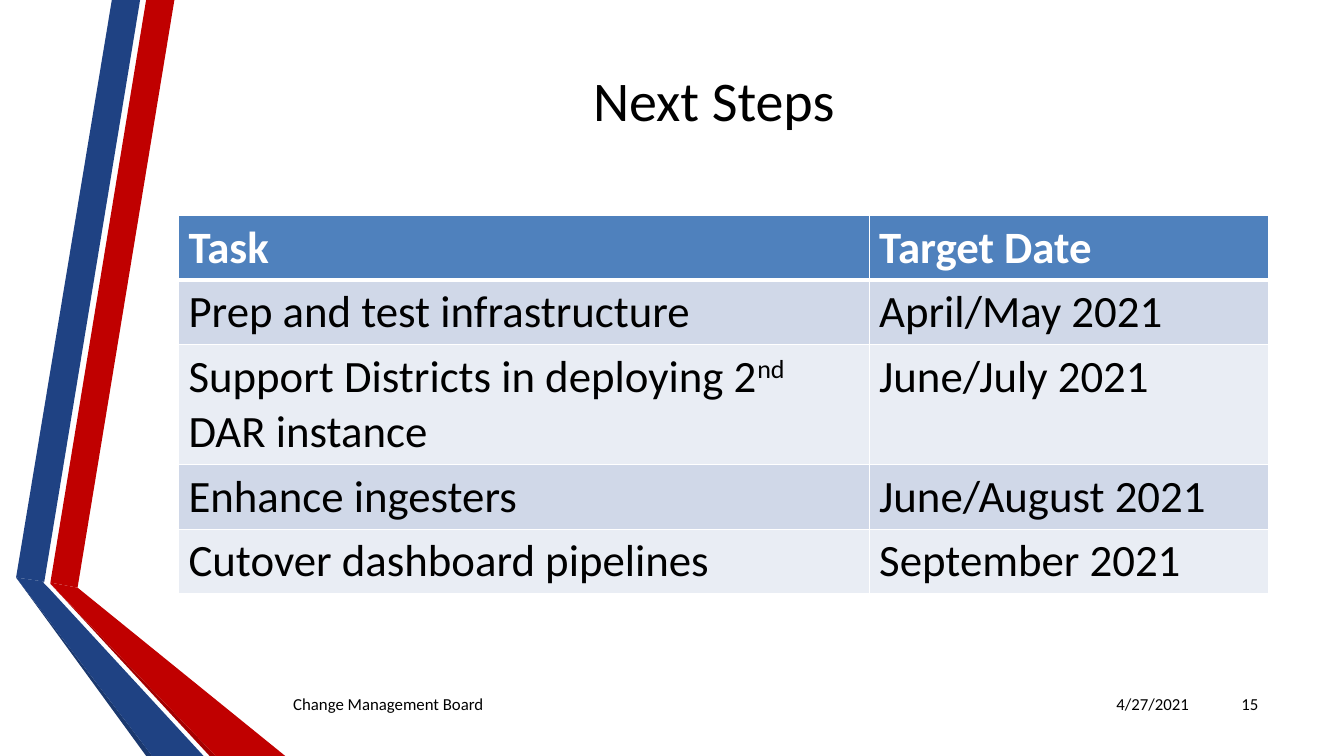
"""Build the Next Steps slide with its ribbon, task table and footer."""
from lxml import etree
from pptx import Presentation
from pptx.dml.color import RGBColor
from pptx.enum.text import MSO_ANCHOR, PP_ALIGN
from pptx.oxml import ns
from pptx.util import Pt

PX = 9144
FONT = "Calibri"
COLORS = {
    "red": "C00000", "dark red": "A40000", "blue": "1F4283", "dark blue": "1B396F",
    "header": "4F81BD", "odd row": "D0D8E8", "even row": "E9EDF4",
    "white": "FFFFFF", "black": "000000",
}
RIBBONS = [
    ("red", [(50, 578), (77, 583), (173, 0), (145, 0)]),
    ("blue", [(139, 0), (111, 0), (16, 573), (44, 577)]),
    ("dark blue", [(16, 573), (145, 750), (151, 750)]),
    ("dark red", [(50, 579), (208, 750), (214, 750)]),
    ("red", [(50, 578), (50, 579), (214, 750), (283, 750), (77, 583)]),
    ("blue", [(202, 750), (48, 583), (43, 578), (44, 577), (16, 573), (151, 750)]),
]
TITLE = ("Next Steps", (160, 28, 1096, 140))
FOOTERS = [
    ("4/27/2021", (1064, 678, 125, 40), PP_ALIGN.RIGHT),
    ("Change Management Board", (281, 678, 775, 40), PP_ALIGN.LEFT),
    ("15", (1198, 678, 60, 40), PP_ALIGN.RIGHT),
]
TABLE_LEFT, TABLE_TOP = 177, 214
COLUMN_WIDTHS = [685, 396]
ROW_HEIGHTS = [64, 64, 119, 64, 64]
ROWS = [
    (["Task"], ["Target Date"]),
    (["Prep and test infrastructure"], ["April/May 2021"]),
    (["Support Districts in deploying 2", "nd", " DAR instance"], ["June/July 2021"]),
    (["Enhance ingesters"], ["June/August 2021"]),
    (["Cutover dashboard pipelines"], ["September 2021"]),
]
SUPERSCRIPTS = {"nd"}


def color(name):
    return RGBColor.from_string(COLORS[name])


def scaled(lengths):
    return [length * PX for length in lengths]


def add_run(paragraph, words, size, color_name="black", bold=False):
    run = paragraph.add_run()
    run.text = words
    run.font.name = FONT
    run.font.size = Pt(size)
    run.font.bold = bold
    run.font.color.rgb = color(color_name)
    if words in SUPERSCRIPTS:
        run.font._element.set("baseline", "30000")


def add_ribbon(slide, color_name, points):
    builder = slide.shapes.build_freeform(*points[0], scale=PX)
    builder.add_line_segments(points[1:], close=True)
    shape = builder.convert_to_shape()
    shape.shadow.inherit = False
    shape.fill.solid()
    shape.fill.fore_color.rgb = color(color_name)
    shape.line.fill.background()


def write_line(shape, words, size, alignment):
    frame = shape.text_frame
    frame.word_wrap = True
    frame.vertical_anchor = MSO_ANCHOR.MIDDLE
    paragraph = frame.paragraphs[0]
    paragraph.alignment = alignment
    add_run(paragraph, words, size)


def set_borders(cell, bottom, top):
    properties = cell._tc.get_or_add_tcPr()
    widths = {"lnL": 1, "lnR": 1, "lnT": top, "lnB": bottom}
    for position, (side, width) in enumerate(widths.items()):
        line = etree.Element(ns.qn(f"a:{side}"), w=str(Pt(width)))
        fill = etree.SubElement(line, ns.qn("a:solidFill"))
        etree.SubElement(fill, ns.qn("a:srgbClr"), val=COLORS["white"])
        properties.insert(position, line)


def add_task_table(slide):
    frame = slide.shapes.add_table(
        len(ROWS), len(COLUMN_WIDTHS),
        *scaled((TABLE_LEFT, TABLE_TOP, sum(COLUMN_WIDTHS), sum(ROW_HEIGHTS))))
    table = frame.table
    for column, width in zip(table.columns, scaled(COLUMN_WIDTHS)):
        column.width = width
    for row, height in zip(table.rows, scaled(ROW_HEIGHTS)):
        row.height = height
    for row_index, row in enumerate(ROWS):
        header = row_index == 0
        band = "header" if header else "odd row" if row_index % 2 else "even row"
        for column_index, runs in enumerate(row):
            cell = table.cell(row_index, column_index)
            cell.fill.solid()
            cell.fill.fore_color.rgb = color(band)
            set_borders(cell, 3 if header else 1, 3 if row_index == 1 else 1)
            for words in runs:
                add_run(cell.text_frame.paragraphs[0], words, 32,
                        "white" if header else "black", header)


def main():
    presentation = Presentation()
    presentation.slide_width, presentation.slide_height = scaled((1333, 750))
    slide = presentation.slides.add_slide(presentation.slide_layouts[5])
    for color_name, points in RIBBONS:
        add_ribbon(slide, color_name, points)
    words, box = TITLE
    title = slide.shapes.title
    title.left, title.top, title.width, title.height = scaled(box)
    write_line(title, words, 40, PP_ALIGN.CENTER)
    for words, box, alignment in FOOTERS:
        write_line(slide.shapes.add_textbox(*scaled(box)), words, 12, alignment)
    add_task_table(slide)
    presentation.save("out.pptx")


if __name__ == "__main__":
    main()
